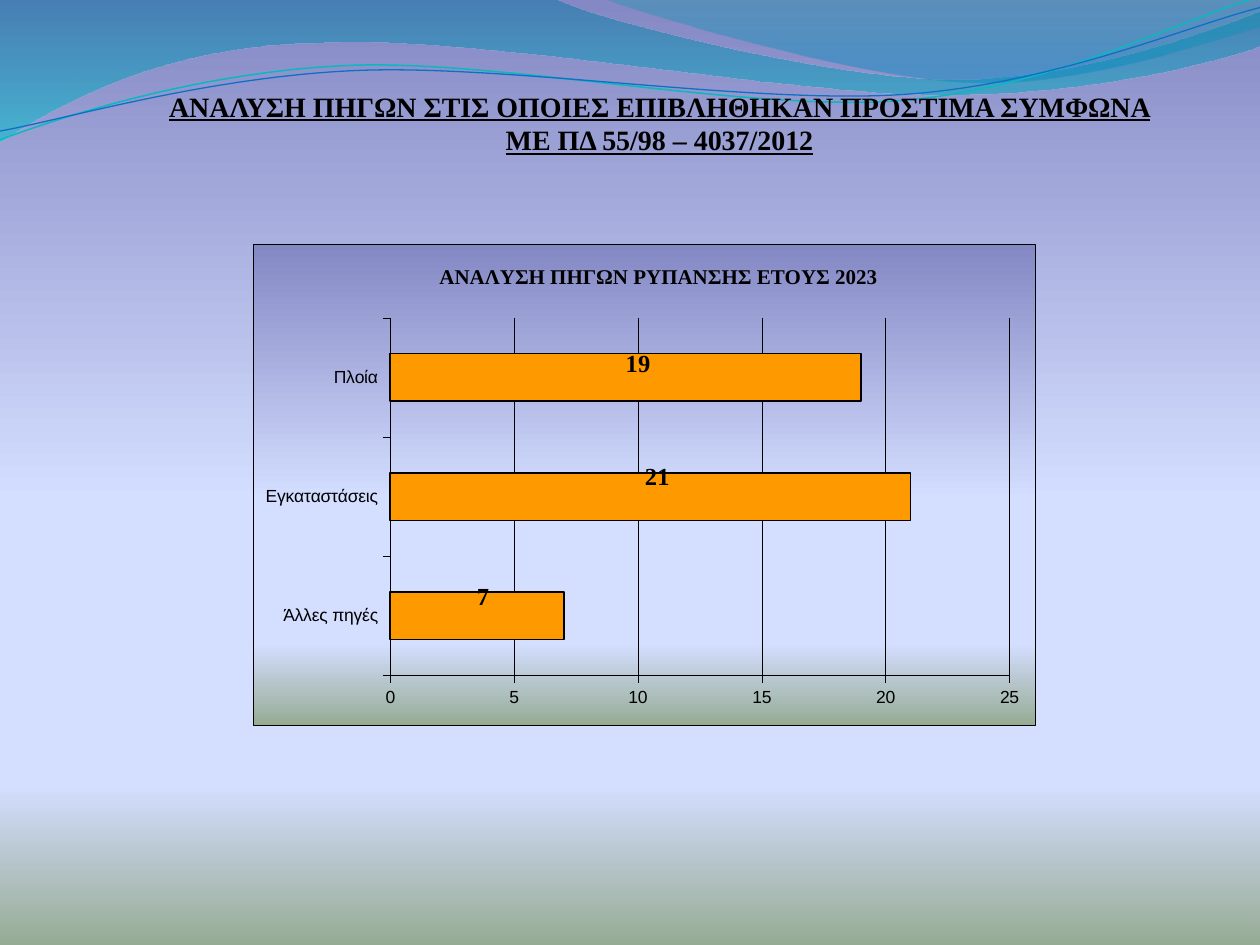
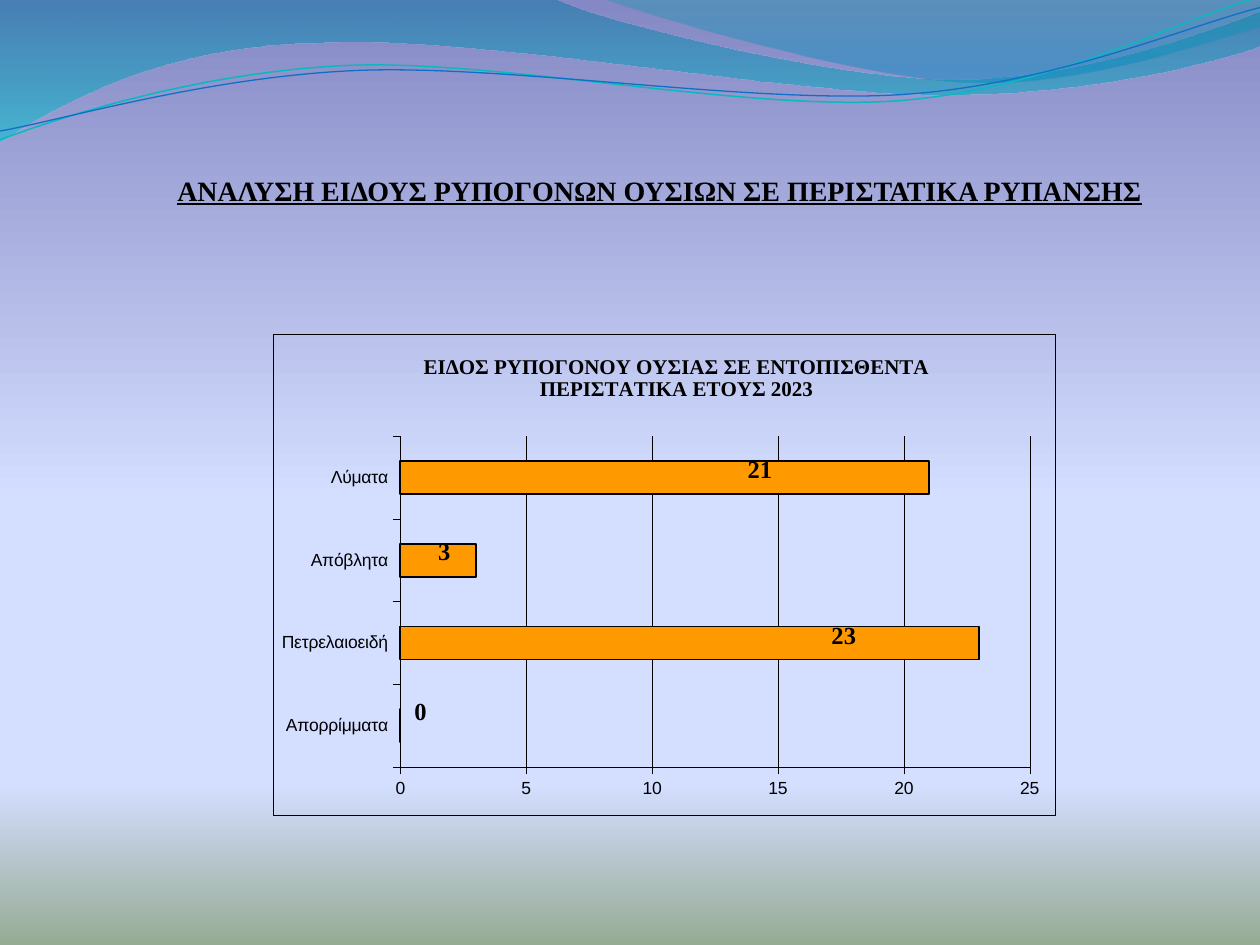
from pptx import Presentation
from pptx.chart.data import CategoryChartData
from pptx.dml.color import RGBColor
from pptx.enum.chart import (XL_CHART_TYPE, XL_LABEL_POSITION,
                             XL_TICK_LABEL_POSITION, XL_TICK_MARK)
from pptx.enum.text import MSO_ANCHOR, MSO_AUTO_SIZE, PP_ALIGN
from pptx.oxml import parse_xml
from pptx.oxml.ns import nsdecls, qn
from pptx.util import Inches, Pt

STACKED, CLUSTERED = XL_CHART_TYPE.BAR_STACKED, XL_CHART_TYPE.BAR_CLUSTERED
MID = XL_LABEL_POSITION.CENTER
LOW = XL_TICK_LABEL_POSITION.LOW
OUT = XL_TICK_MARK.OUTSIDE
BOTTOM, CENTER = MSO_ANCHOR.BOTTOM, PP_ALIGN.CENTER
FIXED = MSO_AUTO_SIZE.NONE

COLORS = {
    "ink": "000000", "bar": "FF9900",
    "dusk": "8488C4", "sky": "D4DEFF", "moss": "96AB94",
    "deep": "0074A1", "aqua": "00C6CF", "teal": "00A1A9", "blue": "008BBF",
    "cyan": "0AB8BF", "navy": "0F6FC6",
}

# Gradient stops: position, colour, opacity (percent)
DAWN = [(0, "dusk", 100), (53, "sky", 100), (83, "sky", 100), (100, "moss", 100)]

# Font formats
HEAD = {"name": "Times New Roman", "size": Pt(16), "bold": True, "underline": True}
CAPTION = {"name": "Times New Roman", "size": Pt(12), "bold": True}
LABEL = {"name": "Times New Roman", "size": Pt(14), "bold": True}
AXIS = {"name": "Arial", "size": Pt(10), "bold": False}

# Outlines in inches: a start point, then lines (2 numbers) and curves (6)
WAVES = [
    ([(0, -0.01), (4.4, -0.01), (4.76, 0.17, 6.64, 0.63, 7.58, 0.63),
      (8.53, 0.63, 9.58, 0.26, 10, 0.09), (10.01, 0.36),
      (9.83, 0.44, 8.7, 0.76, 7.46, 0.75), (6.22, 0.75, 3.82, 0.28, 2.57, 0.34),
      (1.29, 0.35, 0.46, 0.83, -0.01, 1.13)],
     [(0, "deep", 45), (100, "aqua", 55)]),
    ([(4.79, -0.01), (5.09, 0.11, 6.82, 0.62, 7.69, 0.65),
      (8.56, 0.69, 9.61, 0.32, 10, 0.21), (10, 0)],
     [(0, "teal", 30), (80, "blue", 45)]),
]
STRANDS = [
    ([(0, 1.11), (0.48, 0.93, 1.58, 0.57, 2.77, 0.52),
      (3.95, 0.47, 5.93, 0.89, 7.13, 0.8), (8.33, 0.71, 9.38, 0.15, 9.98, -0.02)],
     "cyan", 0.85),
    ([(0, 1.04), (0.47, 0.96, 1.64, 0.61, 2.83, 0.56),
      (4.03, 0.51, 5.97, 0.83, 7.17, 0.75), (8.36, 0.67, 9.41, 0.21, 10, 0.06)],
     "navy", 0.75),
]

# Places inside a chart are percent of its size; label shifts start at mid-bar
SLIDES = [
    {"title": "ΑΝΑΛΥΣΗ ΠΗΓΩΝ ΣΤΙΣ ΟΠΟΙΕΣ ΕΠΙΒΛΗΘΗΚΑΝ ΠΡΟΣΤΙΜA ΣΥΜΦΩΝΑ "
              "ΜΕ ΠΔ 55/98 – 4037/2012",
     "box": (1.22, 0.76, 8.03, 0.48),
     "chart": {
         "kind": STACKED, "at": (2.01, 1.94), "stops": DAWN,
         "title": "ΑΝΑΛΥΣΗ ΠΗΓΩΝ ΡΥΠΑΝΣΗΣ ΕΤΟΥΣ 2023", "spot": (23.3, 3.2),
         "plot": (17.5, 15.2, 79.2, 74.4),
         "rows": [("Άλλες πηγές", 7, (0.8, -4)),
                  ("Εγκαταστάσεις", 21, (0.9, -4)),
                  ("Πλοία", 19, (1.6, -2.8))]}},
    {"title": "ΑΝΑΛΥΣΗ ΕΙΔΟΥΣ ΡΥΠΟΓΟΝΩΝ ΟΥΣΙΩΝ ΣΕ ΠΕΡΙΣΤΑΤΙΚΑ ΡΥΠΑΝΣΗΣ",
     "box": (1.14, 0.77, 8.19, 0.87),
     "chart": {
         "kind": CLUSTERED, "at": (2.17, 2.65), "stops": None,
         "title": "ΕΙΔΟΣ ΡΥΠΟΓΟΝΟΥ ΟΥΣΙΑΣ ΣΕ ΕΝΤΟΠΙΣΘΕΝΤΑ ΠΕΡΙΣΤΑΤΙΚΑ ΕΤΟΥΣ 2023",
         "spot": (18.7, 3.2), "plot": (16.2, 21.3, 80.5, 68.7),
         "rows": [("Απορρίμματα", 0, (2.6, -2.8)),
                  ("Πετρελαιοειδή", 23, (19.7, -1.4)),
                  ("Απόβλητα", 3, (0.8, -1.8)),
                  ("Λύματα", 21, (12.2, -1.6))]}},
]


def rgb(name):
    return RGBColor.from_string(COLORS[name])


def apply(thing, form):
    for key, value in form.items():
        setattr(thing, key, value)


def write(font, form):
    apply(font, form)
    font.color.rgb = rgb("ink")


def stroke(line, color, width):
    line.color.rgb = rgb(color)
    line.width = Pt(width)


def blend(stops):
    """Return the XML of a gradient that runs from top to bottom."""
    marks = "".join(
        f'<a:gs pos="{pos * 1000}"><a:srgbClr val="{COLORS[color]}">'
        f'<a:alpha val="{alpha * 1000}"/></a:srgbClr></a:gs>'
        for pos, color, alpha in stops)
    return (f'<a:gradFill {nsdecls("a")} rotWithShape="1"><a:gsLst>{marks}</a:gsLst>'
            '<a:lin ang="5400000" scaled="0"/></a:gradFill>')


def swap(old, xml):
    old.getparent().replace(old, parse_xml(xml))


def shade(fill, root, stops):
    """Give the fill found under root a gradient."""
    fill.solid()
    swap(next(root.iter(qn("a:solidFill"))), blend(stops))


def outline(slide, parts, close):
    """Build a freeform from end points, then bend the sides that are curves."""
    ends = [tuple(map(Inches, part[-2:])) for part in parts]
    pen = slide.shapes.build_freeform(*ends[0])
    pen.add_line_segments(ends[1:], close=close)
    shape = pen.convert_to_shape()
    shape.shadow.inherit = False
    sides = list(shape._element.iter(qn("a:lnTo")))
    for side, part in zip(sides, parts[1:]):
        if len(part) == 6:
            knots = "".join(
                f'<a:pt x="{Inches(x) - shape.left}" y="{Inches(y) - shape.top}"/>'
                for x, y in zip(part[::2], part[1::2]))
            swap(side, f'<a:cubicBezTo {nsdecls("a")}>{knots}</a:cubicBezTo>')
    return shape


def add_scene(slide):
    shade(slide.background.fill, slide.background._cSld, DAWN)
    for parts, stops in WAVES:
        wave = outline(slide, parts, True)
        wave.line.fill.background()
        shade(wave.fill, wave._element.spPr, stops)
    for parts, color, width in STRANDS:
        strand = outline(slide, parts, False)
        strand.fill.background()
        stroke(strand.line, color, width)


def add_title(slide, text, box):
    frame = slide.shapes.add_textbox(*map(Inches, box)).text_frame
    apply(frame, {"word_wrap": True, "auto_size": FIXED, "vertical_anchor": BOTTOM,
                  "margin_left": 0, "margin_top": Inches(0.05),
                  "margin_right": 0, "margin_bottom": 0})
    line = frame.paragraphs[0]
    line.alignment = CENTER
    run = line.add_run()
    run.text = text
    write(run.font, HEAD)


def place(node, index, modes, spot):
    """Put a manual layout into a chart node as child number index."""
    for old in node.findall(qn("c:layout")):
        node.remove(old)
    items = [*modes.items(), *((key, part / 100) for key, part in zip("xywh", spot))]
    body = "".join(f'<c:{key} val="{value}"/>' for key, value in items)
    node.insert(index, parse_xml(
        f'<c:layout {nsdecls("c")}><c:manualLayout>{body}'
        '</c:manualLayout></c:layout>'))


def frame_chart(chart, stops):
    """Set the fill and border of the whole chart."""
    fill = blend(stops) if stops else "<a:noFill/>"
    chart._chartSpace.find(qn("c:chart")).addnext(parse_xml(
        f'<c:spPr {nsdecls("c", "a")}>{fill}<a:ln w="3175"><a:solidFill>'
        f'<a:srgbClr val="{COLORS["ink"]}"/></a:solidFill></a:ln></c:spPr>'))


def set_axes(chart):
    for axis in (chart.category_axis, chart.value_axis):
        axis.major_tick_mark = OUT
        write(axis.tick_labels.font, AXIS)
        stroke(axis.format.line, "ink", 0.25)
    chart.category_axis.tick_label_position = LOW
    apply(chart.value_axis, {"minimum_scale": 0, "maximum_scale": 25,
                             "major_unit": 5, "has_major_gridlines": True})
    stroke(chart.value_axis.major_gridlines.format.line, "ink", 0.25)


def set_bars(plot, rows):
    apply(plot, {"gap_width": 150, "vary_by_categories": False})
    bars = plot.series[0]
    bars.format.fill.solid()
    bars.format.fill.fore_color.rgb = rgb("bar")
    stroke(bars.format.line, "ink", 1)
    for index in range(len(rows)):
        label = bars.points[index].data_label
        write(label.font, LABEL)
        label.position = MID
    for node, (_, _, shift) in zip(bars._element.iter(qn("c:dLbl")), rows):
        place(node, 1, {}, shift)
    group = bars._element.find(qn("c:dLbls"))
    for old in group.findall(qn("c:showLeaderLines")):
        group.remove(old)
    group.append(parse_xml(f'<c:showLeaderLines {nsdecls("c")} val="0"/>'))


def add_bars(slide, kind, at, stops, title, spot, plot, rows):
    data = CategoryChartData()
    data.categories = [row[0] for row in rows]
    data.add_series("Series 1", [row[1] for row in rows])
    chart = slide.shapes.add_chart(
        kind, *map(Inches, (*at, 6.21, 3.82)), data).chart
    write(chart.font, AXIS)
    chart.has_legend = False
    text = chart.chart_title.text_frame
    text.text = title
    write(text.paragraphs[0].runs[0].font, CAPTION)
    frame_chart(chart, stops)
    set_axes(chart)
    set_bars(chart.plots[0], rows)
    edge = {"xMode": "edge", "yMode": "edge"}
    place(chart.chart_title._element, 1, edge, spot)
    area = chart._chartSpace.find(".//" + qn("c:plotArea"))
    place(area, 0, {"layoutTarget": "inner", **edge}, plot)


def main():
    deck = Presentation()
    deck.slide_width, deck.slide_height = Inches(10), Inches(7.5)
    for page in SLIDES:
        slide = deck.slides.add_slide(deck.slide_layouts[6])
        add_scene(slide)
        add_title(slide, page["title"], page["box"])
        add_bars(slide, **page["chart"])
    deck.save("out.pptx")


if __name__ == "__main__":
    main()
